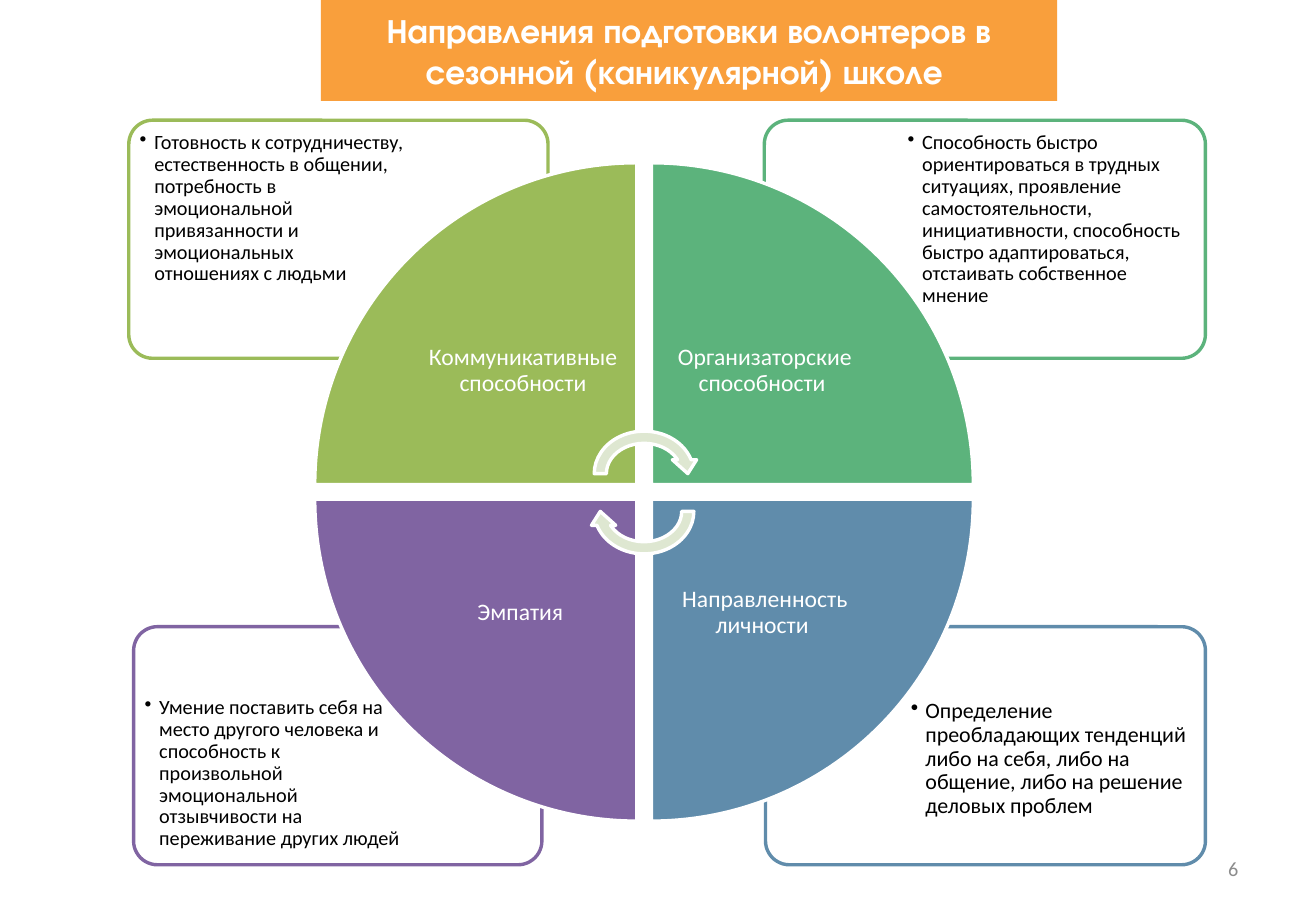
from lxml import etree
from pptx import Presentation
from pptx.dml.color import RGBColor
from pptx.enum.shapes import MSO_SHAPE as SHAPE
from pptx.enum.text import MSO_ANCHOR as ANCHOR, MSO_AUTO_SIZE as AUTO, PP_ALIGN as ALIGN
from pptx.oxml.ns import qn
from pptx.util import Inches, Pt

CENTER_X, CENTER_Y = 5.3, 4.05
HALF_GAP, RADIUS, LABEL = 0.06, 2.65, 1.87
PANEL_H, PANEL_TEXT_H, PANEL_PAD = 1.96, 1.38, 0.04

# (is right, is lower, rotation, colour, label, panel box, text size, inset, panel text)
QUADRANTS = [
    (True, True, 180, "608CAB", "Направленность личности ", (6.3, 5.16, 3.62, PANEL_H), 13, 0.07,
     ["Определение преобладающих тенденций либо на себя, либо на общение, "
      "либо на решение деловых проблем"]),
    (False, True, 270, "8064A2", "Эмпатия ", (1.1, 5.16, 3.36, PANEL_H), 12, 0.05,
     ["Умение поставить себя на место другого человека и способность к произвольной "
      "эмоциональной отзывчивости на переживание других людей"]),
    (True, False, 90, "5CB37C", "Организаторские способности ", (6.29, 0.99, 3.63, PANEL_H), 12, 0.05,
     ["Способность быстро ориентироваться в трудных ситуациях, проявление самостоятельности, "
      "инициативности, способность быстро адаптироваться, отстаивать собственное мнение"]),
    (False, False, 0, "9BBB59", "Коммуникативные способности", (1.06, 0.99, 3.45, PANEL_H), 12, 0.05,
     ["Готовность к сотрудничеству, естественность в общении, потребность в эмоциональной "
      "привязанности и эмоциональных ", "отношениях с людьми"]),
]


def rgb(color):
    return RGBColor.from_string(color)


def inches(box):
    return [Inches(v) for v in box]


def add_outlined(s, kind, box, fill, line, rotation=0):
    sp = s.shapes.add_shape(kind, *inches(box))
    sp.shadow.inherit = False
    sp.fill.solid()
    sp.fill.fore_color.rgb = rgb(fill)
    sp.line.color.rgb = rgb(line)
    sp.line.width = Pt(2)
    sp.rotation = rotation
    return sp


def add_run(p, text, size, color, font="Calibri", bold=False):
    r = p.add_run()
    r.text = text
    r.font.name, r.font.size, r.font.bold = font, Pt(size), bold
    r.font.color.rgb = rgb(color)


def add_text_box(s, box, anchor, inset):
    tf = s.shapes.add_textbox(*inches(box)).text_frame
    tf.word_wrap = True
    tf.vertical_anchor = anchor
    tf.margin_left = tf.margin_right = tf.margin_top = tf.margin_bottom = Inches(inset)
    return tf.paragraphs[0]


def set_bullet(p, indent):
    pPr = p._p.get_or_add_pPr()
    pPr.set("marL", str(Inches(indent)))
    pPr.set("indent", str(-Inches(indent)))
    etree.SubElement(pPr, qn("a:buChar")).set("char", "•")


def add_title(s, box):
    title = s.shapes.title
    title.left, title.top, title.width, title.height = inches(box)
    title.fill.solid()
    title.fill.fore_color.rgb = rgb("F99F3C")
    tf = title.text_frame
    tf.auto_size = AUTO.NONE
    tf.word_wrap = True
    tf.vertical_anchor = ANCHOR.MIDDLE
    p = tf.paragraphs[0]
    p.alignment = ALIGN.CENTER
    add_run(p, "Направления подготовки волонтеров в сезонной (каникулярной) школе ",
            20, "FFFFFF", "TeX Gyre Adventor", True)


def add_panel(s, box, right, lower, color, size, inset, lines):
    """Frame whose bulleted text keeps to the corner away from the circle."""
    x, y, w, h = box
    add_outlined(s, SHAPE.ROUNDED_RECTANGLE, box, "FFFFFF", color).adjustments[0] = 0.1
    text_w = 0.7 * w - 2 * PANEL_PAD
    text_x = x + w - PANEL_PAD - text_w if right else x + PANEL_PAD
    text_y = y + h - 0.05 - PANEL_TEXT_H if lower else y + 0.05
    p = add_text_box(s, (text_x, text_y, text_w, PANEL_TEXT_H), ANCHOR.TOP, inset)
    set_bullet(p, 0.12)
    p.line_spacing = 0.9
    for i, line in enumerate(lines):
        if i:
            p.add_line_break()
        add_run(p, line, size, "000000")


def quadrant_box(right, lower, side):
    """Square of the given side touching the inner corner of a quadrant."""
    x = CENTER_X + HALF_GAP if right else CENTER_X - HALF_GAP - side
    y = CENTER_Y + HALF_GAP if lower else CENTER_Y - HALF_GAP - side
    return x, y, side, side


def add_wedge(s, right, lower, rotation, color, label):
    add_outlined(s, SHAPE.PIE_WEDGE, quadrant_box(right, lower, RADIUS), color, "FFFFFF", rotation)
    p = add_text_box(s, quadrant_box(right, lower, LABEL), ANCHOR.MIDDLE, 0.11)
    p.alignment = ALIGN.CENTER
    p.line_spacing = 0.9
    add_run(p, label, 14, "FFFFFF")


def add_cycle_arrows(s, w, h):
    for y, rotation in ((3.5, 0), (3.81, 180)):
        add_outlined(s, SHAPE.CIRCULAR_ARROW, (CENTER_X - w / 2, y, w, h),
                     "DEE7D1", "FFFFFF", rotation)


def add_slide_number(s, box):
    p = add_text_box(s, box, ANCHOR.MIDDLE, 0.1)
    p.alignment = ALIGN.RIGHT
    add_run(p, "6", 12, "8C8C8C")


def main():
    prs = Presentation()
    prs.slide_width, prs.slide_height = Inches(10.83), Inches(7.5)
    s = prs.slides.add_slide(prs.slide_layouts[5])
    add_title(s, (2.64, 0, 6.06, 0.83))
    for right, lower, _, color, _, box, size, inset, lines in QUADRANTS:
        add_panel(s, box, right, lower, color, size, inset, lines)
    for right, lower, rotation, color, label, *_ in QUADRANTS:
        add_wedge(s, right, lower, rotation, color, label)
    add_cycle_arrows(s, 0.92, 0.8)
    add_slide_number(s, (7.76, 6.95, 2.53, 0.4))
    prs.save("out.pptx")


if __name__ == "__main__":
    main()
